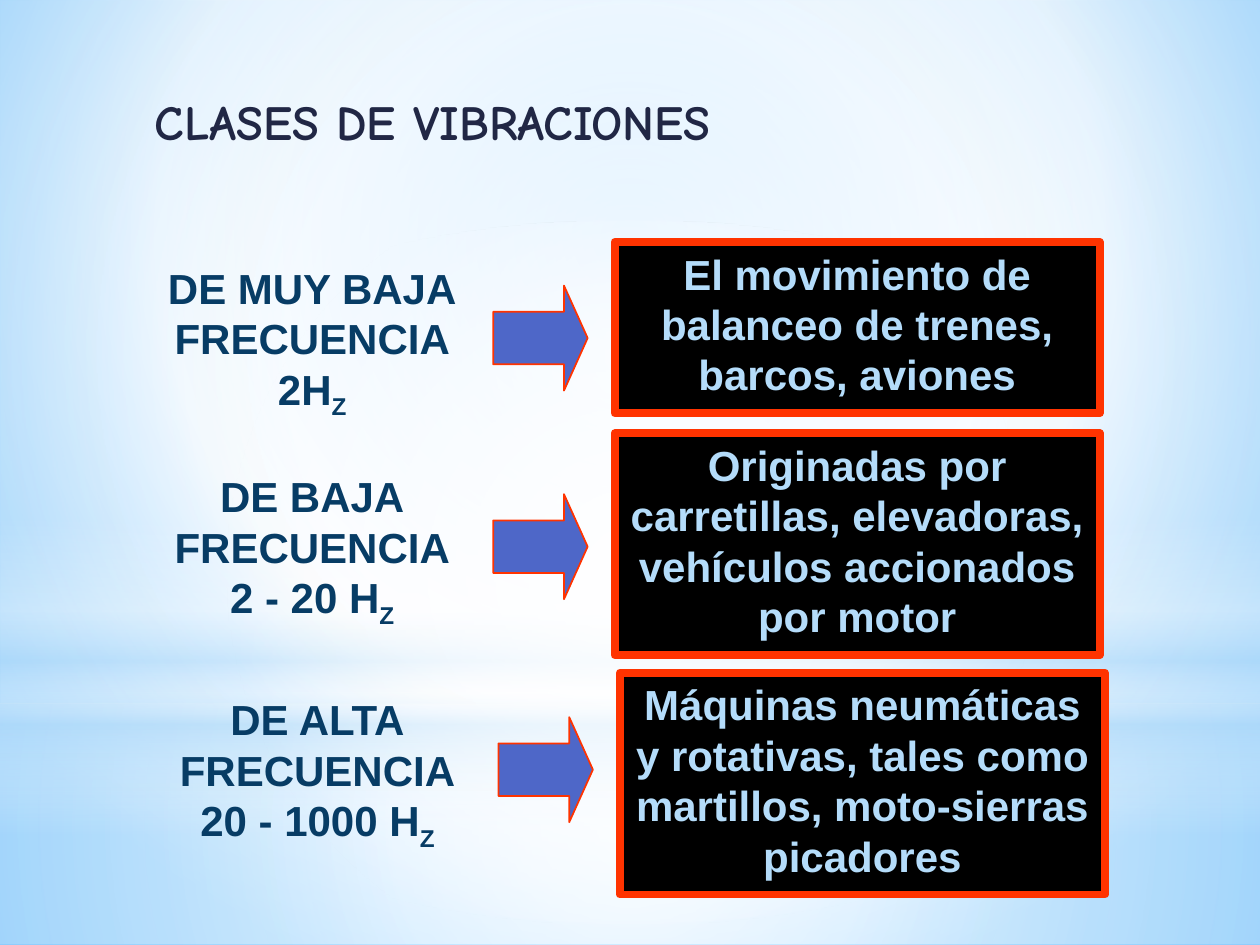
from lxml.etree import SubElement
from pptx import Presentation
from pptx.dml.color import RGBColor
from pptx.enum.shapes import MSO_SHAPE
from pptx.enum.text import MSO_ANCHOR, MSO_AUTO_SIZE, PP_ALIGN
from pptx.oxml import parse_xml
from pptx.oxml.ns import nsdecls, qn
from pptx.util import Pt

# Content: label lines, unit subscript, example, tops, box height, shift to the right
TITLE = "CLASES DE VIBRACIONES"
ROWS = [
    dict(label=["DE MUY BAJA", "FRECUENCIA", "2H"], sub="Z",
         example="El movimiento de balanceo de trenes, barcos, aviones",
         label_top=146.4, box_top=138.2, box_height=98, shift=0),
    dict(label=["DE BAJA", "FRECUENCIA", "2 - 20 H"], sub="Z",
         example="Originadas por carretillas, elevadoras, vehículos accionados por motor",
         label_top=265.6, box_top=247.6, box_height=126.8, shift=0),
    dict(label=["DE ALTA", "FRECUENCIA", "20 - 1000 H"], sub="Z",
         example="Máquinas neumáticas y rotativas, tales como martillos, "
                 "moto-sierras picadores",
         label_top=393, box_top=384.4, box_height=126.8, shift=3),
]

THEME = dict(
    title="212745", label="073C65", pale="B4DCFA", box="000000",
    border="FF3300", arrow="4E67C8", white="FFFFFF",
    title_font="Comic Neue", body_font="Arial", title_size=28, body_size=24,
)
WHITE, PALE = THEME["white"], THEME["pale"]
CENTRE = (50, 50, 50, 50)

# Gradient stops: position, colour, opacity (all percentages)
BACKDROP = [(0, "9ED5FF", 100), (60, WHITE, 100), (100, "5BB9FF", 100)]
GLOWS = [
    (MSO_SHAPE.RECTANGLE, (0, 402, 720, 138),
     [(0, WHITE, 91), (37, WHITE, 76), (100, PALE, 79)], CENTRE),
    (MSO_SHAPE.RECTANGLE, (0, 0, 720, 402),
     [(0, WHITE, 89), (48, WHITE, 62), (100, PALE, 79)], CENTRE),
    (MSO_SHAPE.RECTANGLE, (0, 296.6, 720, 180),
     [(0, WHITE, 0), (29, WHITE, 30), (45, PALE, 40), (55, WHITE, 26),
      (65, PALE, 60), (100, WHITE, 0)], None),
    (MSO_SHAPE.OVAL, (0, 126, 720, 402), [(0, WHITE, 100), (56, WHITE, 0)], CENTRE),
]


def colour(name):
    return RGBColor.from_string(THEME[name])


def set_gradient(parent, stops, focus=None):
    """Replace the solid fill in parent: radial around focus, else top to bottom."""
    gradient = parse_xml(f'<a:gradFill {nsdecls("a")} rotWithShape="1"/>')
    stop_list = SubElement(gradient, qn("a:gsLst"))
    for position, value, opacity in stops:
        stop = SubElement(stop_list, qn("a:gs"), pos=str(position * 1000))
        tint = SubElement(stop, qn("a:srgbClr"), val=value)
        if opacity < 100:
            SubElement(tint, qn("a:alpha"), val=str(opacity * 1000))
    if focus:
        route = SubElement(gradient, qn("a:path"), path="circle")
        edges = {side: str(share * 1000) for side, share in zip("ltrb", focus)}
        SubElement(route, qn("a:fillToRect"), edges)
    else:
        SubElement(gradient, qn("a:lin"), ang="5400000", scaled="0")
    parent.replace(parent.find(qn("a:solidFill")), gradient)


def add_shape(page, kind, frame, fill, border=None, width=1):
    shape = page.shapes.add_shape(kind, *map(Pt, frame))
    shape.shadow.inherit = False
    shape.fill.solid()
    shape.fill.fore_color.rgb = colour(fill)
    if border:
        shape.line.color.rgb = colour(border)
        shape.line.width = Pt(width)
    else:
        shape.line.fill.background()
    return shape


def write(box, lines, *, ink, font="body_font", size="body_size",
          align=PP_ALIGN.CENTER, wrap=True, sub=""):
    frame = box.text_frame
    frame.word_wrap = wrap
    frame.auto_size = MSO_AUTO_SIZE.SHAPE_TO_FIT_TEXT
    frame.vertical_anchor = MSO_ANCHOR.TOP
    for index, line in enumerate(lines):
        para = frame.add_paragraph() if index else frame.paragraphs[0]
        para.alignment = align
        pieces = [(line, None)]
        if sub and index == len(lines) - 1:
            pieces.append((sub, "-25000"))
        for text, baseline in pieces:
            span = para.add_run()
            span.text = text
            span.font.name = THEME[font]
            span.font.size = Pt(THEME[size])
            span.font.bold = True
            span.font.color.rgb = colour(ink)
            if baseline:
                span.font._element.set("baseline", baseline)


def add_text(page, frame, lines, **style):
    write(page.shapes.add_textbox(*map(Pt, frame)), lines, **style)


def add_row(page, row):
    shift = row["shift"]
    add_text(page, (87.4 + shift, row["label_top"], 182, 94.4), row["label"],
             ink="label", wrap=False, sub=row["sub"])
    box = add_shape(page, MSO_SHAPE.RECTANGLE,
                    (351.2 + shift, row["box_top"], 277.2, row["box_height"]),
                    "box", "border", 4.5)
    write(box, [row["example"]], ink="pale")
    arrow = add_shape(page, MSO_SHAPE.RIGHT_ARROW,
                      (281.8 + shift, row["label_top"] + 16.8, 54, 60),
                      "arrow", "border")
    arrow.adjustments[0], arrow.adjustments[1] = 0.5, 0.25


def main():
    deck = Presentation()
    deck.slide_width, deck.slide_height = Pt(720), Pt(540)
    page = deck.slides.add_slide(deck.slide_layouts[6])

    # Background and soft glows
    page.background.fill.solid()
    set_gradient(page.element.find(".//" + qn("p:bgPr")), BACKDROP, (20, 10, 20, 60))
    for kind, frame, stops, focus in GLOWS:
        glow = add_shape(page, kind, frame, "white")
        set_gradient(glow.element.spPr, stops, focus)

    # Title and rows
    add_text(page, (81.4, 49, 454.4, 41), [TITLE], ink="title", font="title_font",
             size="title_size", align=PP_ALIGN.LEFT)
    for row in ROWS:
        add_row(page, row)
    deck.save("out.pptx")


if __name__ == "__main__":
    main()
